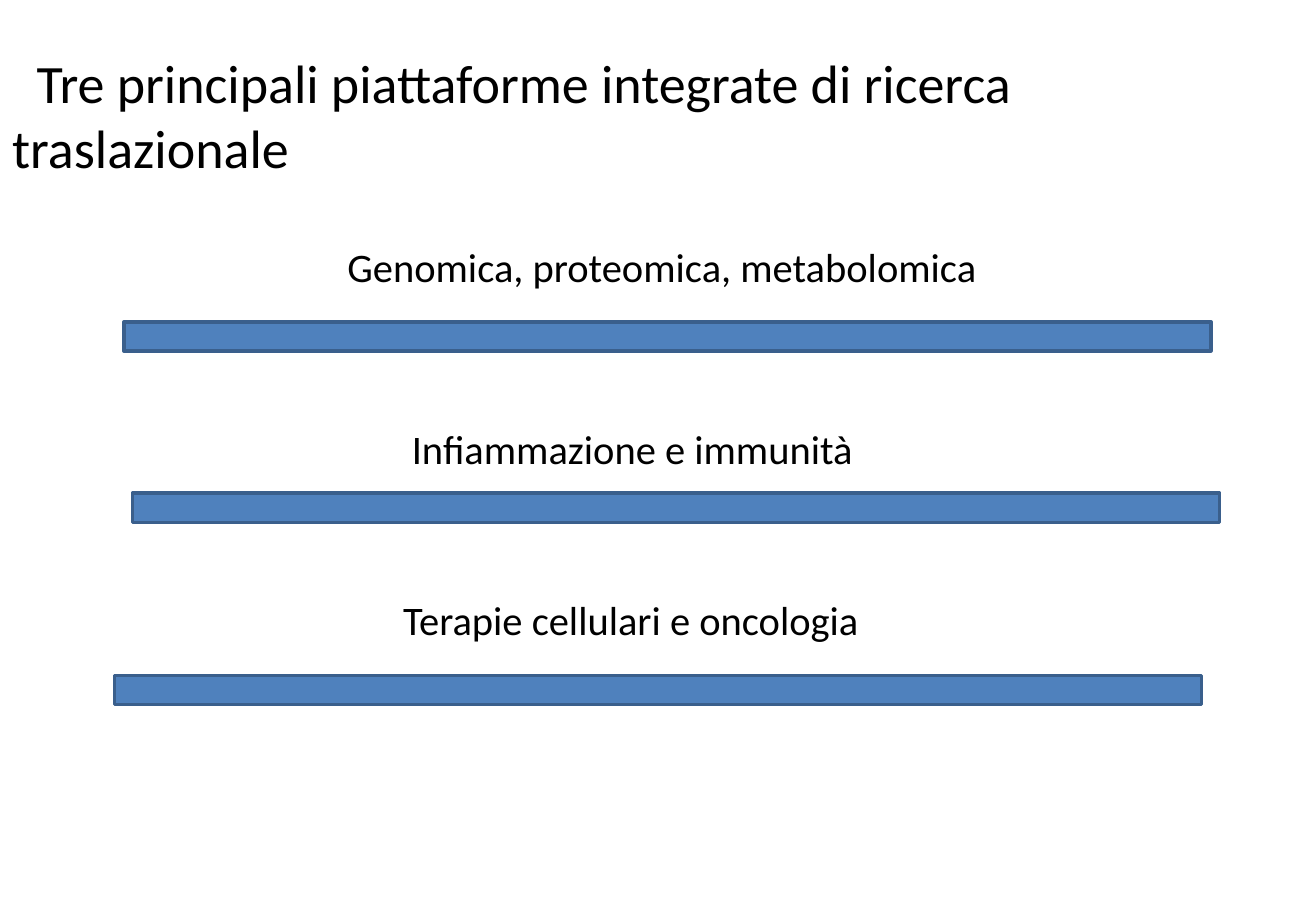
from pptx import Presentation
from pptx.dml.color import RGBColor
from pptx.enum import shapes, text
from pptx.util import Pt

BLACK = RGBColor(0x00, 0x00, 0x00)
BAR_BLUE = RGBColor(0x4F, 0x81, 0xBD)
BAR_EDGE = RGBColor(0x3A, 0x5F, 0x8C)
FONT = "Calibri"
TITLE_ONLY = 5

# label, its left, top and width, then the left and top of its bar
PLATFORMS = [
    ("Genomica, proteomica, metabolomica", 198.8, 139.7, 464, 73.4, 190.8),
    ("Infiammazione e immunità", 237, 247.7, 322, 78.5, 292.3),
    ("Terapie cellulari e oncologia", 231.8, 349.2, 300, 67.7, 400.3),
]


def format_text(shape, content, size):
    frame = shape.text_frame
    frame.text = content
    frame.word_wrap = True
    frame.auto_size = text.MSO_AUTO_SIZE.NONE
    frame.vertical_anchor = text.MSO_ANCHOR.TOP
    paragraph = frame.paragraphs[0]
    paragraph.alignment = text.PP_ALIGN.LEFT
    paragraph.font.name = FONT
    paragraph.font.size = Pt(size)
    paragraph.font.color.rgb = BLACK
    return paragraph


def set_title(slide, content):
    """Place the title with an indented first line."""
    title = slide.shapes.title
    title.left, title.top = Pt(0), Pt(25.9)
    title.width, title.height = Pt(756), Pt(85)
    paragraph = format_text(title, content, 32)
    paragraph._p.get_or_add_pPr().set("indent", str(Pt(14.5)))


def add_label(slide, content, left, top, width):
    box = slide.shapes.add_textbox(Pt(left), Pt(top), Pt(width), Pt(36))
    format_text(box, content, 24)


def add_bar(slide, left, top):
    bar = slide.shapes.add_shape(
        shapes.MSO_SHAPE.RECTANGLE, Pt(left), Pt(top), Pt(644.4), Pt(17.3))
    bar.shadow.inherit = False
    bar.fill.solid()
    bar.fill.fore_color.rgb = BAR_BLUE
    bar.line.color.rgb = BAR_EDGE
    bar.line.width = Pt(2)


def main():
    presentation = Presentation()
    presentation.slide_width = Pt(780)
    presentation.slide_height = Pt(540)
    slide = presentation.slides.add_slide(presentation.slide_layouts[TITLE_ONLY])
    set_title(slide, "Tre principali piattaforme integrate di ricerca traslazionale")
    for label, left, top, width, bar_left, bar_top in PLATFORMS:
        add_label(slide, label, left, top, width)
        add_bar(slide, bar_left, bar_top)
    presentation.save("out.pptx")


if __name__ == "__main__":
    main()
